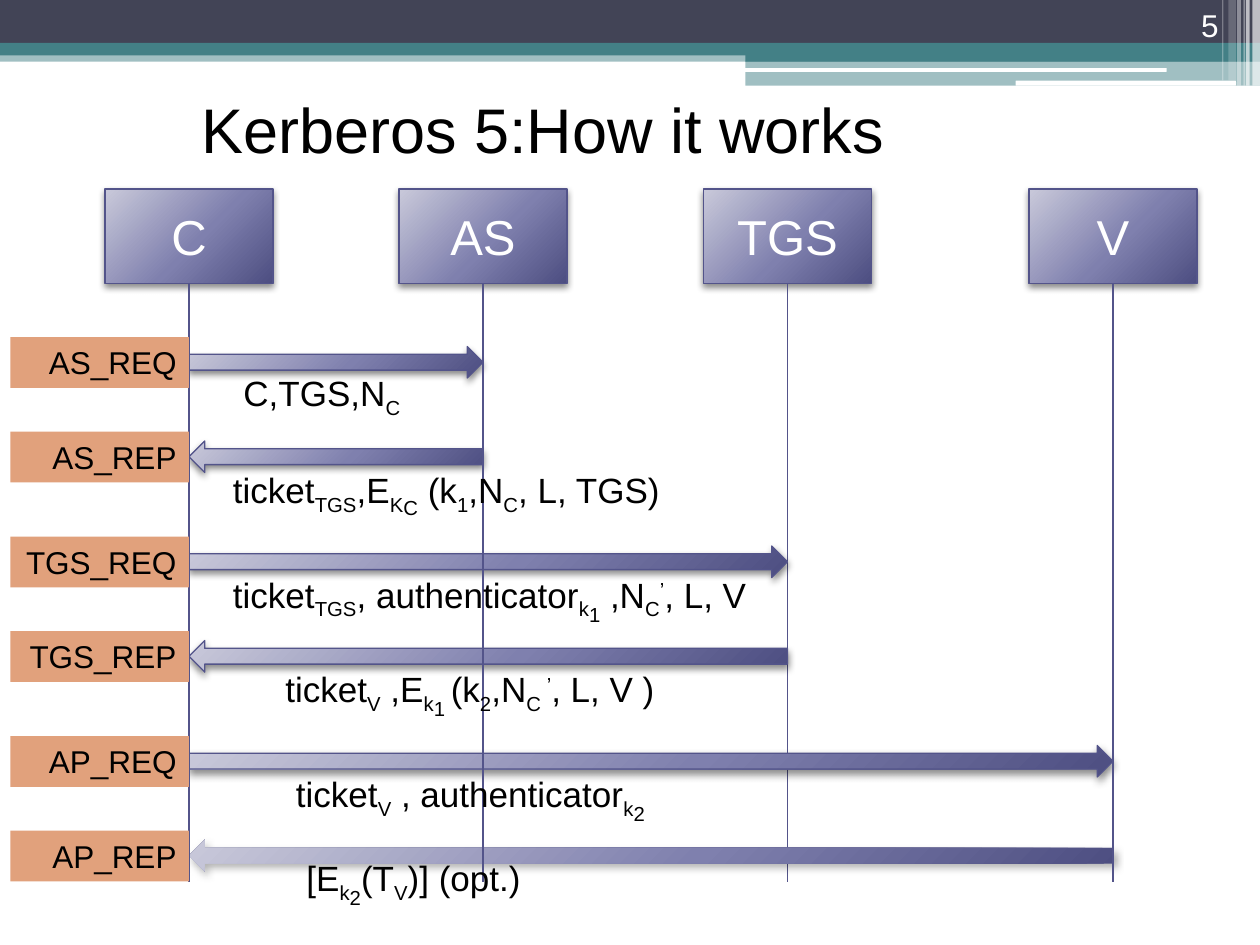
from lxml.etree import SubElement
from pptx import Presentation
from pptx.dml.color import RGBColor
from pptx.enum.shapes import MSO_CONNECTOR, MSO_SHAPE
from pptx.enum.text import MSO_ANCHOR, MSO_AUTO_SIZE, PP_ALIGN
from pptx.oxml import parse_xml
from pptx.oxml.ns import nsdecls, qn
from pptx.util import Pt

THEME = {
    "font": "Arial",
    "black": "000000", "white": "FFFFFF",
    "navy": "424456", "teal": "438086", "chip": "E1A17C", "line": "53548A",
    "gradient": [(0, "C9C9DA"), (55, "7F80AE"), (100, "4D4E81")],
    "title": 36, "party": 28, "message": 20, "small": 18,
}

# Header bands: left, top, width, height, colour, opacity in percent
BANDS = [
    (0, 28.8, 720, 6.5, "teal", 50),
    (0, 0, 720, 24.5, "navy", 100),
    (0, 24.5, 720, 7.2, "teal", 100),
    (426, 28.1, 294, 7.2, "teal", 100),
    (426, 34.6, 294, 14.4, "teal", 50),
]
ROUNDED_BANDS = [(425.5, 38.9, 241.2, 2.2), (580.3, 46.1, 126, 2.9)]
# Header stripes: left, width, height, opacity
STRIPES = [
    (715.7, 4.3, 49, 65), (712, 2.1, 49, 65), (710.6, 0.7, 49, 60),
    (707, 2.1, 49, 40), (702, 4.3, 46, 20), (698.4, 0.7, 46, 30),
]

# Centre line of each party
PARTIES = {"C": 108, "AS": 276, "TGS": 450, "V": 636}
PARTY_TOP, PARTY_WIDTH, PARTY_HEIGHT = 108, 96, 54
LIFELINE_END = 504

# Name, far party, arrow top, flips, label (left, top, width), label spans (text, baseline)
MESSAGES = [
    ("AS_REQ", "AS", 198, "", (132, 208.8, 150), [("C,TGS,N", 0), ("C", -25)]),
    ("AS_REP", "AS", 252, "H", (126, 264.3, 384),
     [("ticket", 0), ("TGS", -25), (",E", 0), ("K", -25), ("C", -35), (" (k", 0),
      ("1", -25), (",N", 0), ("C", -25), (", L, TGS)", 0)]),
    ("TGS_REQ", "TGS", 312, "", (126, 324, 414),
     [("ticket", 0), ("TGS", -25), (", authenticator", 0), ("k", -25), ("1", -40),
      (" ,N", 0), ("C", -25), ("’", 30), (", L, V", 0)]),
    ("TGS_REP", "TGS", 366, "H", (156, 378, 246),
     [("ticket", 0), ("V", -25), (" ,E", 0), ("k", -25), ("1 ", -40), ("(k", 0),
      ("2", -25), (",N", 0), ("C ", -25), ("’", 30), (", L, V )", 0)]),
    ("AP_REQ", "V", 426, "", (162, 438, 408),
     [("ticket", 0), ("V", -25), (" , authenticator", 0), ("k", -25), ("2", -40)]),
    ("AP_REP", "V", 480, "HV", (168, 486, 342),
     [("[E", 0), ("k", -25), ("2", -40), ("(T", 0), ("V", -25), (")] (opt.)", 0)]),
]
ARROW_HEIGHT, CHIP_LEFT, CHIP_HEIGHT, CHIP_RISE = 18, 6, 29, 5.3
LABEL_HEIGHT = 31.7

deck = Presentation()
deck.slide_width, deck.slide_height = Pt(720), Pt(540)
page = deck.slides.add_slide(deck.slide_layouts[6])


def write(box, spans, size, color="black", align=PP_ALIGN.LEFT,
          anchor=MSO_ANCHOR.TOP, grow=False):
    """Put one paragraph of (text, baseline percent) spans into a box."""
    frame = box.text_frame
    frame.word_wrap = True
    frame.vertical_anchor = anchor
    frame.auto_size = MSO_AUTO_SIZE.SHAPE_TO_FIT_TEXT if grow else MSO_AUTO_SIZE.NONE
    para = frame.paragraphs[0]
    para.alignment = align
    for text, baseline in spans:
        span = para.add_run()
        span.text = text
        span.font.name = THEME["font"]
        span.font.size = Pt(THEME[size])
        span.font.color.rgb = RGBColor.from_string(THEME[color])
        if baseline:
            span.font._element.set("baseline", str(baseline * 1000))


def add_text(left, top, width, height, spans, size, **options):
    box = page.shapes.add_textbox(Pt(left), Pt(top), Pt(width), Pt(height))
    write(box, spans, size, **options)


def add_block(left, top, width, height, color, kind=MSO_SHAPE.RECTANGLE, opacity=100):
    shape = page.shapes.add_shape(kind, Pt(left), Pt(top), Pt(width), Pt(height))
    shape.shadow.inherit = False
    shape.fill.solid()
    shape.fill.fore_color.rgb = RGBColor.from_string(THEME[color])
    shape.line.fill.background()
    if opacity < 100:
        tint = shape._element.spPr.find(".//" + qn("a:srgbClr"))
        SubElement(tint, qn("a:alpha"), val=str(opacity * 1000))
    return shape


def add_glossy(left, top, width, height, kind, outlined=True, shadow=(45, 4, 2, 90)):
    """Shape with a radial gradient and a shadow (opacity, blur, distance, angle)."""
    shape = add_block(left, top, width, height, "line", kind)
    properties = shape._element.spPr
    stops = "".join(f'<a:gs pos="{at * 1000}"><a:srgbClr val="{color}"/></a:gs>'
                    for at, color in THEME["gradient"])
    gradient = parse_xml(
        f'<a:gradFill {nsdecls("a")} rotWithShape="1"><a:gsLst>{stops}</a:gsLst>'
        '<a:path path="circle"><a:fillToRect l="-40000" t="-90000" r="140000" b="190000"/>'
        '</a:path></a:gradFill>')
    properties.replace(properties.find(qn("a:solidFill")), gradient)
    if outlined:
        shape.line.color.rgb = RGBColor.from_string(THEME["line"])
        shape.line.width = Pt(0.75)
    opacity, blur, distance, angle = shadow
    effect = SubElement(properties.find(qn("a:effectLst")), qn("a:outerShdw"),
                        blurRad=str(Pt(blur)), dist=str(Pt(distance)),
                        dir=str(angle * 60000), rotWithShape="0")
    tint = SubElement(effect, qn("a:srgbClr"), val=THEME["black"])
    SubElement(tint, qn("a:alpha"), val=str(opacity * 1000))
    return shape


def add_lifeline(party):
    x = Pt(PARTIES[party])
    line = page.shapes.add_connector(MSO_CONNECTOR.STRAIGHT, x,
                                     Pt(PARTY_TOP + PARTY_HEIGHT), x, Pt(LIFELINE_END))
    line.line.color.rgb = RGBColor.from_string(THEME["line"])
    line.line.width = Pt(0.75)
    SubElement(line._element.spPr, qn("a:effectLst"))


# Header
for *place, color, opacity in BANDS:
    add_block(*place, color, opacity=opacity)
for place in ROUNDED_BANDS:
    add_block(*place, "white", MSO_SHAPE.ROUNDED_RECTANGLE)
for left, width, height, opacity in STRIPES:
    add_block(left, 0, width, height, "white", opacity=opacity)
add_text(108, 48, 492, 51, [("Kerberos 5:How it works", 0)], "title", grow=True)
add_text(643.7, 0, 59.8, 28.8, [("5", 0)], "small", color="white",
         align=PP_ALIGN.RIGHT, anchor=MSO_ANCHOR.BOTTOM)

# Parties
for party, center in PARTIES.items():
    box = add_glossy(center - PARTY_WIDTH / 2, PARTY_TOP, PARTY_WIDTH, PARTY_HEIGHT,
                     MSO_SHAPE.RECTANGLE)
    write(box, [(party, 0)], "party", color="white", align=PP_ALIGN.CENTER,
          anchor=MSO_ANCHOR.MIDDLE)

# Arrows, with the TGS lifeline behind them and the others in front
client = PARTIES["C"]
add_lifeline("TGS")
for name, party, top, flips, *_ in MESSAGES:
    optional = name == "AP_REP"
    arrow = add_glossy(client, top, PARTIES[party] - client, ARROW_HEIGHT,
                       MSO_SHAPE.RIGHT_ARROW, outlined=not optional,
                       shadow=(30, 4.5, 2.6, 53) if optional else (45, 4, 2, 90))
    for axis in flips:
        arrow._element.spPr.get_or_add_xfrm().set("flip" + axis, "1")
for party in ("AS", "C", "V"):
    add_lifeline(party)

# Message names and contents
for name, _, top, _, (left, label_top, width), spans in MESSAGES:
    chip = add_block(CHIP_LEFT, top - CHIP_RISE, client - CHIP_LEFT, CHIP_HEIGHT, "chip")
    write(chip, [(name, 0)], "small", align=PP_ALIGN.RIGHT, grow=True)
    add_text(left, label_top, width, LABEL_HEIGHT, spans, "message", grow=True)

deck.save("out.pptx")
